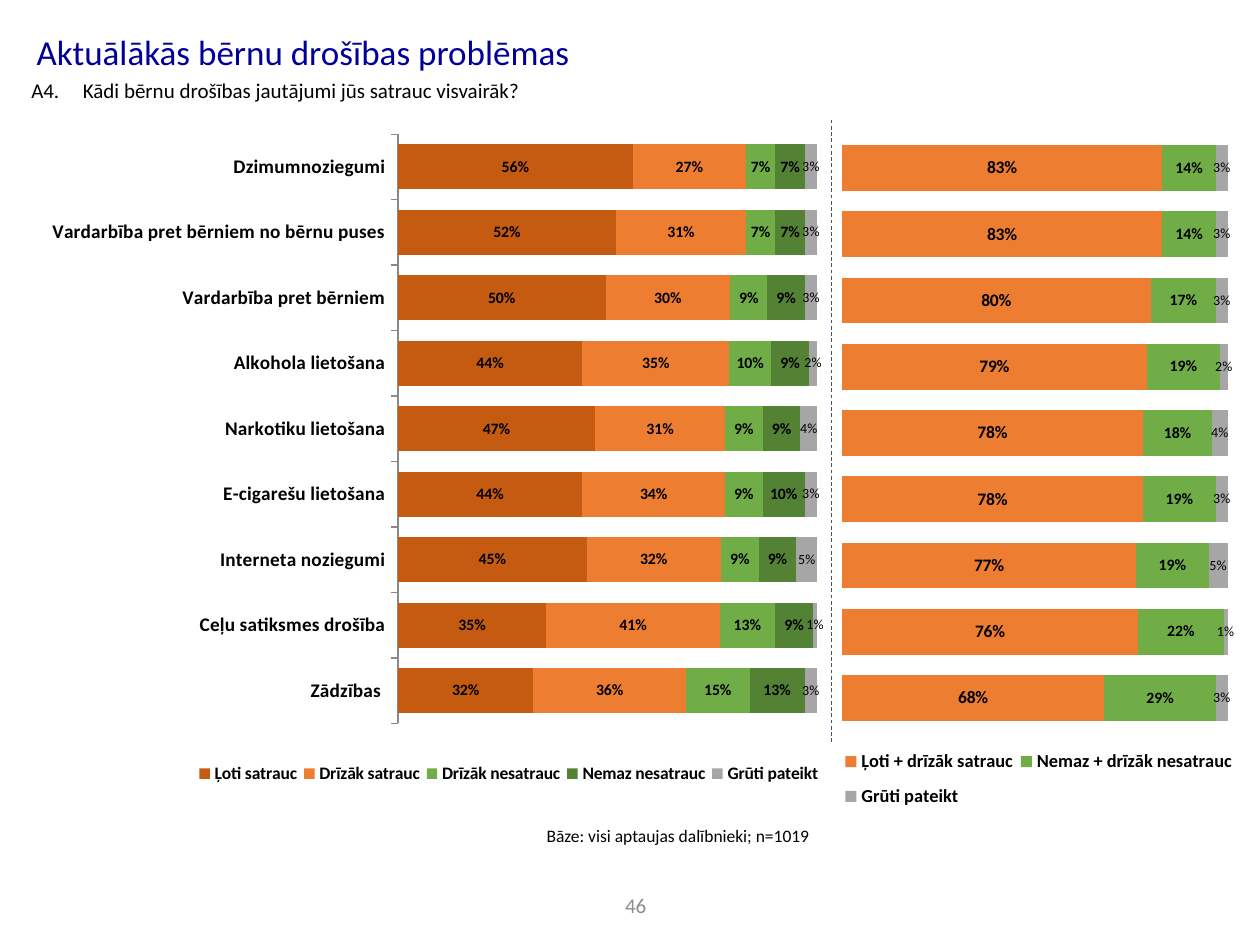
from dataclasses import dataclass

from lxml.etree import SubElement
from pptx import Presentation
from pptx.chart.data import CategoryChartData
from pptx.dml.color import RGBColor
from pptx.enum.chart import XL_CHART_TYPE as ChartType, XL_LABEL_POSITION as LabelSpot
from pptx.enum.chart import XL_LEGEND_POSITION as LegendSpot, XL_TICK_MARK as Tick
from pptx.enum.dml import MSO_LINE as Dash
from pptx.enum.shapes import MSO_CONNECTOR as Connector
from pptx.enum.text import MSO_ANCHOR as Anchor, PP_ALIGN as Align
from pptx.oxml import parse_xml
from pptx.oxml.ns import nsdecls, qn
from pptx.util import Inches, Pt


@dataclass(frozen=True)
class Theme:
    """Colours, font and type sizes of the slide."""
    font: str = "Calibri"
    heading: str = "000099"
    ink: str = "000000"
    muted: str = "8C8C8C"
    divider: str = "44546A"
    axis: str = "898989"
    very: str = "C55A11"
    rather: str = "ED7D31"
    rather_not: str = "70AD47"
    not_at_all: str = "548235"
    unsure: str = "A6A6A6"
    title_size: float = 20
    body_size: float = 12
    note_size: float = 10
    category_size: float = 11
    large_label: float = 10
    label: float = 9
    small_label: float = 8


@dataclass(frozen=True)
class Answer:
    """One series: its name, colour, label size and whole percentages."""
    name: str
    color: str
    size: float
    percents: tuple
    bold: bool = True


THEME = Theme()
TOPICS = (
    "Zādzības ", "Ceļu satiksmes drošība", "Interneta noziegumi",
    "E-cigarešu lietošana", "Narkotiku lietošana", "Alkohola lietošana",
    "Vardarbība pret bērniem", "Vardarbība pret bērniem no bērnu puses",
    "Dzimumnoziegumi",
)
UNSURE = Answer("Grūti pateikt", THEME.unsure, THEME.small_label,
                (3, 1, 5, 3, 4, 2, 3, 3, 3), False)
DETAILED = (
    Answer("Ļoti satrauc", THEME.very, THEME.label, (32, 35, 45, 44, 47, 44, 50, 52, 56)),
    Answer("Drīzāk satrauc", THEME.rather, THEME.label, (36, 41, 32, 34, 31, 35, 30, 31, 27)),
    Answer("Drīzāk nesatrauc", THEME.rather_not, THEME.label, (15, 13, 9, 9, 9, 10, 9, 7, 7)),
    Answer("Nemaz nesatrauc", THEME.not_at_all, THEME.label, (13, 9, 9, 10, 9, 9, 9, 7, 7)),
    UNSURE,
)
SUMMARY = (
    Answer("Ļoti + drīzāk satrauc", THEME.rather, THEME.large_label,
           (68, 76, 77, 78, 78, 79, 80, 83, 83)),
    Answer("Nemaz + drīzāk nesatrauc", THEME.rather_not, THEME.label,
           (29, 22, 19, 19, 18, 19, 17, 14, 14)),
    UNSURE,
)


def style_font(font, size, color=THEME.ink, bold=False):
    """Apply the theme font with a size, colour and weight."""
    font.name, font.size, font.bold = THEME.font, Pt(size), bold
    font.color.rgb = RGBColor.from_string(color)


def write(shape, text, size, color, align=Align.LEFT, anchor=Anchor.TOP, wrap=True):
    """Write one paragraph in a shape and return it."""
    frame = shape.text_frame
    frame.word_wrap, frame.vertical_anchor = wrap, anchor
    para = frame.paragraphs[0]
    para.alignment = align
    span = para.add_run()
    span.text = text
    style_font(span.font, size, color)
    return para


def add_heading(page, box):
    """Place the title in the box and the survey question below it."""
    left, top, width, height = box
    title = page.shapes.title
    title.left, title.top, title.width, title.height = box
    write(title, "Aktuālākās bērnu drošības problēmas", THEME.title_size,
          THEME.heading, anchor=Anchor.MIDDLE)
    question = page.shapes.add_textbox(left - Inches(0.04), top + Inches(0.41),
                                       width + Inches(0.3), Inches(0.37))
    para = write(question, "A4.\tKādi bērnu drošības jautājumi jūs satrauc visvairāk?",
                 THEME.body_size, THEME.ink)
    properties = para._p.get_or_add_pPr()
    properties.set("marL", str(Inches(0.41)))
    properties.set("indent", str(-Inches(0.41)))


def place_part(part, index, bounds, inner=False):
    """Give a chart part a manual layout in fractions of the chart."""
    for old in part.findall(qn("c:layout")):
        part.remove(old)
    layout = parse_xml(f"<c:layout {nsdecls('c')}><c:manualLayout/></c:layout>")
    settings = [("layoutTarget", "inner")] if inner else []
    settings += [("xMode", "edge"), ("yMode", "edge"), *zip("xywh", bounds)]
    for name, value in settings:
        SubElement(layout[0], qn(f"c:{name}")).set("val", str(value))
    part.insert(index, layout)


def add_bars(page, box, topics, answers, plot_bounds, legend_bounds, legend_size, show_topics):
    """Place a fully stacked bar chart with its legend in the box."""
    data = CategoryChartData(number_format="0%")
    data.categories = topics
    for answer in answers:
        data.add_series(answer.name, [percent / 100 for percent in answer.percents])
    chart = page.shapes.add_chart(ChartType.BAR_STACKED_100, *box, data).chart
    style_font(chart.font, 18)
    chart.has_title = False

    plot = chart.plots[0]
    plot.gap_width, plot.overlap, plot.vary_by_categories = 45, 100, False
    for series, answer in zip(plot.series, answers):
        series.format.fill.solid()
        series.format.fill.fore_color.rgb = RGBColor.from_string(answer.color)
        labels = series.data_labels
        labels.show_value, labels.position = True, LabelSpot.CENTER
        labels.number_format, labels.number_format_is_linked = "0%", False
        style_font(labels.font, answer.size, bold=answer.bold)

    values, categories = chart.value_axis, chart.category_axis
    values.has_major_gridlines = values.visible = False
    values.minimum_scale, values.maximum_scale = 0, 1
    categories.visible = show_topics
    if show_topics:
        categories.major_tick_mark = Tick.OUTSIDE
        categories.format.line.color.rgb = RGBColor.from_string(THEME.axis)
        style_font(categories.tick_labels.font, THEME.category_size, bold=True)

    chart.has_legend = True
    legend = chart.legend
    legend.position, legend.include_in_layout = LegendSpot.RIGHT, False
    style_font(legend.font, legend_size, bold=True)
    place_part(chart._chartSpace.chart.plotArea, 0, plot_bounds, inner=True)
    place_part(legend._element, 1, legend_bounds)


def add_divider(page, left, top, height):
    """Draw the dashed vertical line between the charts."""
    line = page.shapes.add_connector(Connector.STRAIGHT, left, top, left, top + height)
    line.line.color.rgb = RGBColor.from_string(THEME.divider)
    line.line.width, line.line.dash_style = Pt(0.5), Dash.DASH
    SubElement(line._element.spPr, qn("a:effectLst"))


def add_footer(page, note_box, number_box):
    """Place the sample note and the page number."""
    write(page.shapes.add_textbox(*note_box), "Bāze: visi aptaujas dalībnieki; n=1019",
          THEME.note_size, THEME.ink, wrap=False)
    write(page.shapes.add_textbox(*number_box), "46", THEME.body_size, THEME.muted,
          Align.CENTER, Anchor.MIDDLE)


def inches(*lengths):
    """Turn plain numbers into a box of lengths."""
    return tuple(Inches(length) for length in lengths)


def main():
    """Build the slide and save it."""
    deck = Presentation()
    deck.slide_width, deck.slide_height = inches(10, 7.5)
    page = deck.slides.add_slide(deck.slide_layouts[5])
    add_heading(page, inches(0.19, 0.16, 9.5, 0.49))
    add_bars(page, inches(0.27, 1.06, 6.28, 5.32), TOPICS, DETAILED,
             (0.46, 0, 0.53, 0.88), (0.2, 0.92, 0.8, 0.07), 10, True)
    add_bars(page, inches(6.65, 1.07, 3.19, 5.44),
             [str(number + 1) for number in range(len(TOPICS))], SUMMARY,
             (0.01, 0, 0.96, 0.87), (0, 0.88, 1, 0.12), 10.5, False)
    add_divider(page, *inches(6.6, 0.95, 4.96))
    add_footer(page, inches(4.24, 6.5, 2.31, 0.27), inches(4.77, 7.04, 0.55, 0.28))
    deck.save("out.pptx")


if __name__ == "__main__":
    main()
